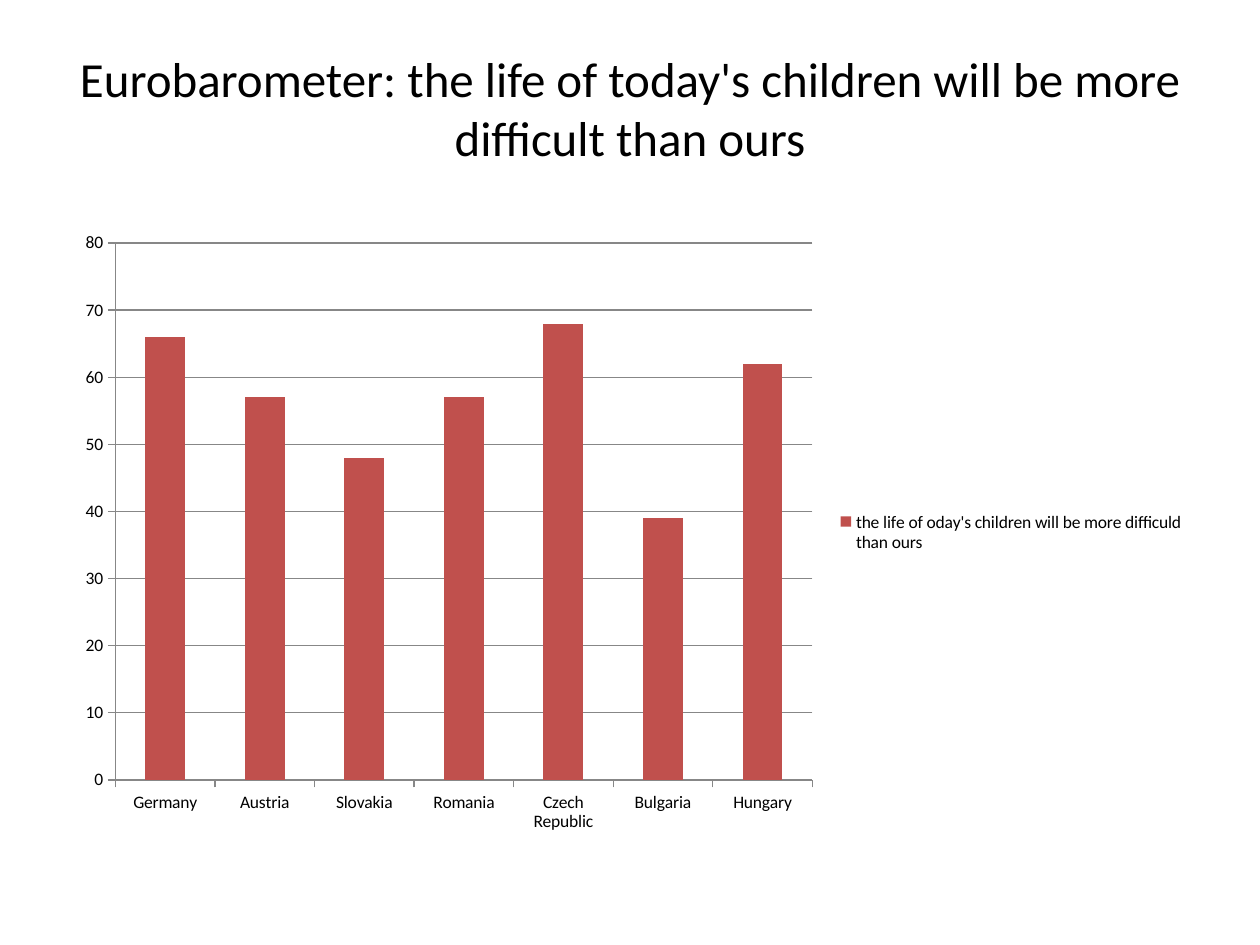
import pptx
import pptx.chart.data
import pptx.dml.color
import pptx.enum.chart
import pptx.enum.text
import pptx.util
from pptx.util import Cm

BLACK = pptx.dml.color.RGBColor(0x00, 0x00, 0x00)
RED = pptx.dml.color.RGBColor(0xC0, 0x50, 0x4D)
GREY = pptx.dml.color.RGBColor(0x87, 0x87, 0x87)
FONT = "Calibri"
MARGIN = Cm(1.27)
CONTENT_WIDTH = Cm(22.86)

SHARES = {
    "Germany": 66,
    "Austria": 57,
    "Slovakia": 48,
    "Romania": 57,
    "Czech Republic": 68,
    "Bulgaria": 39,
    "Hungary": 62,
}

deck = pptx.Presentation()
deck.slide_width = Cm(25.4)
deck.slide_height = Cm(19.05)
page = deck.slides.add_slide(deck.slide_layouts[6])

# Title
title_box = page.shapes.add_textbox(MARGIN, Cm(0.76), CONTENT_WIDTH, Cm(3.18))
title_frame = title_box.text_frame
title_frame.word_wrap = True
title_frame.vertical_anchor = pptx.enum.text.MSO_ANCHOR.MIDDLE
title_frame.margin_bottom = Cm(0.48)
title_frame.text = "Eurobarometer: the life of today's children will be more difficult than ours"
para = title_frame.paragraphs[0]
para.alignment = pptx.enum.text.PP_ALIGN.CENTER
span = para.runs[0]
span.font.name = FONT
span.font.size = pptx.util.Pt(28)
span.font.color.rgb = BLACK

# Column chart
chart_data = pptx.chart.data.CategoryChartData()
chart_data.categories = list(SHARES)
chart_data.add_series(
    "the life of oday's children will be more difficuld than ours", list(SHARES.values())
)
chart = page.shapes.add_chart(
    pptx.enum.chart.XL_CHART_TYPE.COLUMN_CLUSTERED,
    MARGIN, Cm(4.45), CONTENT_WIDTH, Cm(12.57), chart_data,
).chart
chart.has_title = False
chart.font.name = FONT
chart.font.size = pptx.util.Pt(10)
chart.font.color.rgb = BLACK

chart.has_legend = True
chart.legend.position = pptx.enum.chart.XL_LEGEND_POSITION.RIGHT
chart.legend.include_in_layout = False

plot = chart.plots[0]
plot.gap_width = 150
plot.vary_by_categories = False
columns = plot.series[0].format.fill
columns.solid()
columns.fore_color.rgb = RED

value_axis = chart.value_axis
value_axis.minimum_scale = 0
value_axis.maximum_scale = 80
value_axis.major_unit = 10
value_axis.has_major_gridlines = True
for line in (
    value_axis.format.line,
    value_axis.major_gridlines.format.line,
    chart.category_axis.format.line,
):
    line.color.rgb = GREY
    line.width = pptx.util.Pt(0.75)
for axis in (value_axis, chart.category_axis):
    axis.major_tick_mark = pptx.enum.chart.XL_TICK_MARK.OUTSIDE
    axis.minor_tick_mark = pptx.enum.chart.XL_TICK_MARK.NONE

deck.save("out.pptx")
